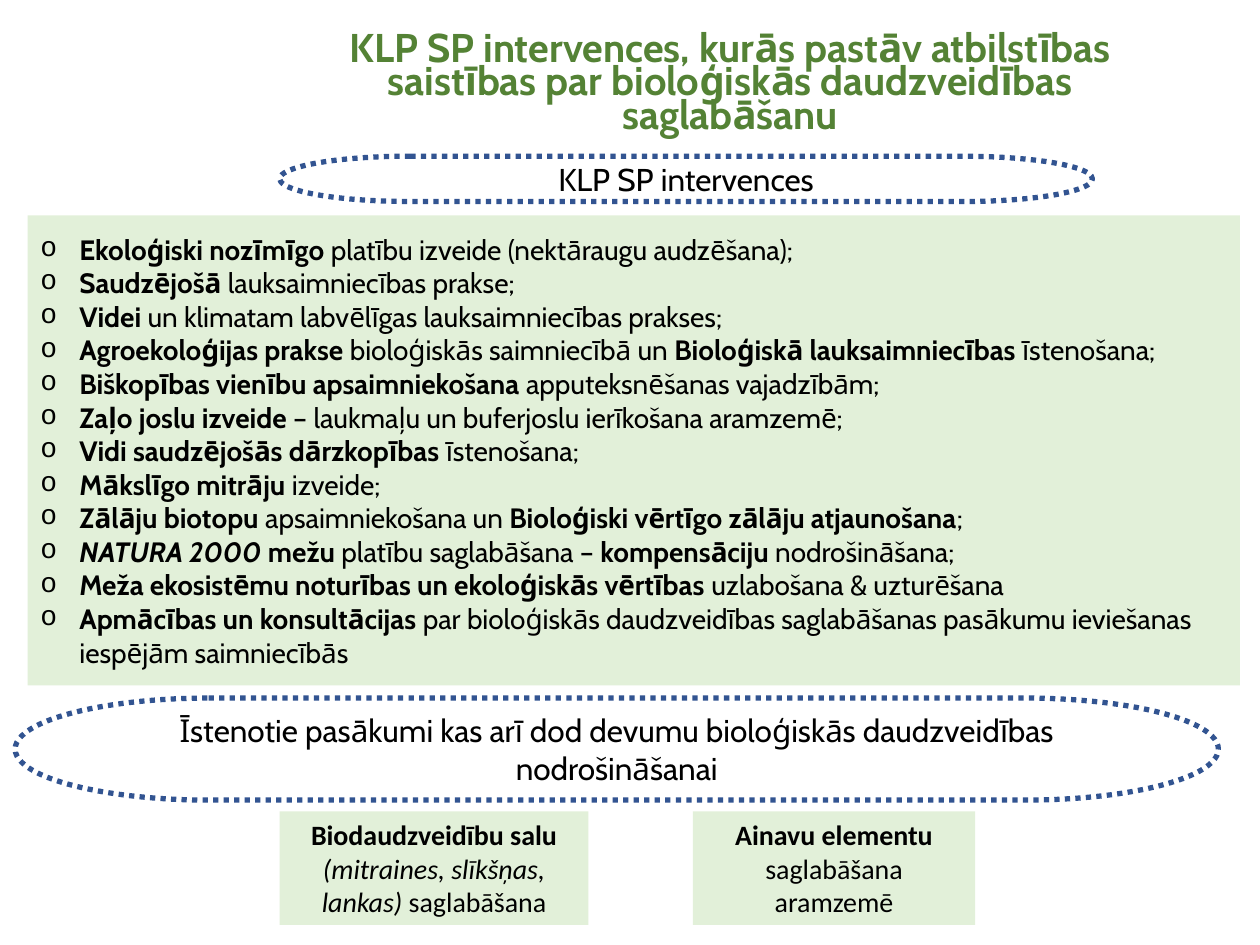
from dataclasses import dataclass
from typing import NamedTuple

from lxml.etree import SubElement
from pptx import Presentation
from pptx.dml.color import RGBColor
from pptx.enum.dml import MSO_LINE
from pptx.enum.shapes import MSO_SHAPE
from pptx.enum.text import MSO_ANCHOR, MSO_AUTO_SIZE, PP_ALIGN
from pptx.oxml.ns import qn
from pptx.util import Emu, Pt

SCALE = 9144


@dataclass(frozen=True)
class Theme:
    """Colours, fonts and type sizes of the slide."""
    green: RGBColor = RGBColor(0x54, 0x82, 0x35)
    pale: RGBColor = RGBColor(0xE2, 0xF0, 0xD9)
    blue: RGBColor = RGBColor(0x32, 0x54, 0x91)
    black: RGBColor = RGBColor(0, 0, 0)
    main: str = "Cabin"
    alt: str = "Calibri"
    title: float = 22.9
    label: float = 18
    body: float = 16


class Box(NamedTuple):
    """Place and size in px."""
    left: int
    top: int
    width: int
    height: int


class Bit(NamedTuple):
    """A piece of text in one style."""
    text: str
    bold: bool = False
    slant: bool = False


class Label(NamedTuple):
    """A dotted label."""
    box: Box
    text: str


class Card(NamedTuple):
    """A filled card."""
    box: Box
    bits: list[Bit]


THEME = Theme()
TITLE = "KLP SP intervences, kurās pastāv atbilstības saistības par bioloģiskās daudzveidības saglabāšanu"
ITEMS = [
    [Bit("Ekoloģiski nozīmīgo ", True), Bit("platību izveide (nektāraugu audzēšana);")],
    [Bit("Saudzējošā ", True), Bit("lauksaimniecības prakse;")],
    [Bit("Videi", True), Bit(" un klimatam labvēlīgas lauksaimniecības prakses;")],
    [Bit("Agroekoloģijas prakse", True), Bit(" bioloģiskās saimniecībā un "),
     Bit("Bioloģiskā lauksaimniecības ", True), Bit("īstenošana;")],
    [Bit("Biškopības vienību apsaimniekošana ", True), Bit("apputeksnēšanas vajadzībām;")],
    [Bit("Zaļo joslu izveide ", True), Bit("– laukmaļu un buferjoslu ierīkošana aramzemē;")],
    [Bit("Vidi saudzējošās dārzkopības ", True), Bit("īstenošana;")],
    [Bit("Mākslīgo mitrāju ", True), Bit("izveide;")],
    [Bit("Zālāju biotopu ", True), Bit("apsaimniekošana un "),
     Bit("Bioloģiski vērtīgo zālāju atjaunošana", True), Bit(";")],
    [Bit("NATURA 2000", True, True), Bit(" mežu ", True), Bit("platību saglabāšana –"),
     Bit(" kompensāciju", True), Bit(" nodrošināšana;")],
    [Bit("Meža ekosistēmu noturības un ekoloģiskās vērtības ", True),
     Bit("uzlabošana & uzturēšana")],
    [Bit("Apmācības un konsultācijas ", True),
     Bit("par bioloģiskās daudzveidības saglabāšanas pasākumu ieviešanas iespējām saimniecībās")],
]
LABELS = [
    Label(Box(222, 124, 645, 36), "KLP SP intervences"),
    Label(Box(12, 554, 955, 81),
          "Īstenotie pasākumi kas arī dod devumu bioloģiskās daudzveidības nodrošināšanai"),
]
CARDS = [
    Card(Box(222, 644, 245, 90),
         [Bit("Biodaudzveidību salu ", True), Bit("(mitraines, slīkšņas, lankas)", slant=True),
          Bit(" saglabāšana")]),
    Card(Box(550, 644, 224, 90),
         [Bit("Ainavu elementu ", True), Bit("saglabāšana aramzemē")]),
]


def px(size: int) -> Emu:
    """Turn px into EMU."""
    return Emu(size * SCALE)


def place(shape, box: Box) -> None:
    """Move and size a shape."""
    shape.left, shape.top, shape.width, shape.height = map(px, box)


def paint(shape) -> None:
    """Give a shape the pale fill."""
    shape.fill.solid()
    shape.fill.fore_color.rgb = THEME.pale


def setup(frame, anchor: MSO_ANCHOR) -> None:
    """Wrap the text at fixed size."""
    frame.word_wrap = True
    frame.auto_size = MSO_AUTO_SIZE.NONE
    frame.vertical_anchor = anchor


def write(para, bits: list[Bit], font: str, size: float,
          tint: RGBColor = THEME.black, align: PP_ALIGN = PP_ALIGN.CENTER) -> None:
    """Fill a paragraph with styled runs."""
    para.alignment = align
    for bit in bits:
        run = para.add_run()
        run.text = bit.text
        run.font.name, run.font.size = font, Pt(size)
        run.font.bold, run.font.italic = bit.bold, bit.slant
        run.font.color.rgb = tint


def bullet(para) -> None:
    """Add a hanging round bullet."""
    props = para._p.get_or_add_pPr()
    props.set("marL", str(px(31)))
    props.set("indent", str(px(-31)))
    SubElement(props, qn("a:buFont")).set("typeface", "Courier New")
    SubElement(props, qn("a:buChar")).set("char", "o")


def head(shape) -> None:
    """Draw the title."""
    place(shape, Box(223, 24, 713, 92))
    frame = shape.text_frame
    setup(frame, MSO_ANCHOR.TOP)
    frame.margin_left = frame.margin_right = px(8)
    frame.margin_top = frame.margin_bottom = px(4)
    para = frame.paragraphs[0]
    para.line_spacing = 0.7
    write(para, [Bit(TITLE, True)], THEME.main, THEME.title, THEME.green)


def body(shape) -> None:
    """Draw the bullet list."""
    place(shape, Box(22, 171, 962, 373))
    paint(shape)
    frame = shape.text_frame
    setup(frame, MSO_ANCHOR.MIDDLE)
    for rank, bits in enumerate(ITEMS):
        para = frame.add_paragraph() if rank else frame.paragraphs[0]
        bullet(para)
        para.space_before = Pt(0)
        align = PP_ALIGN.LEFT if bits is ITEMS[-1] else PP_ALIGN.JUSTIFY
        write(para, bits, THEME.main, THEME.body, align=align)


def block(slide, kind: MSO_SHAPE, box: Box, bits: list[Bit], font: str, size: float):
    """Add a shape with centred text."""
    shape = slide.shapes.add_shape(kind, *map(px, box))
    shape.shadow.inherit = False
    setup(shape.text_frame, MSO_ANCHOR.MIDDLE)
    write(shape.text_frame.paragraphs[0], bits, font, size)
    return shape


def label(slide, item: Label) -> None:
    """Draw a dotted label."""
    shape = block(slide, MSO_SHAPE.FLOWCHART_TERMINATOR, item.box,
                  [Bit(item.text)], THEME.main, THEME.label)
    shape.fill.background()
    shape.line.color.rgb = THEME.blue
    shape.line.width = Pt(3)
    shape.line.dash_style = MSO_LINE.ROUND_DOT


def card(slide, item: Card) -> None:
    """Draw a filled card."""
    shape = block(slide, MSO_SHAPE.RECTANGLE, item.box, item.bits, THEME.alt, THEME.body)
    paint(shape)
    shape.line.fill.background()


def main() -> None:
    """Build and save the slide."""
    deck = Presentation()
    deck.slide_width, deck.slide_height = px(1000), px(750)
    slide = deck.slides.add_slide(deck.slide_layouts[1])
    head(slide.shapes.title)
    body(slide.placeholders[1])
    for item in LABELS:
        label(slide, item)
    for item in CARDS:
        card(slide, item)
    deck.save("out.pptx")


if __name__ == "__main__":
    main()
